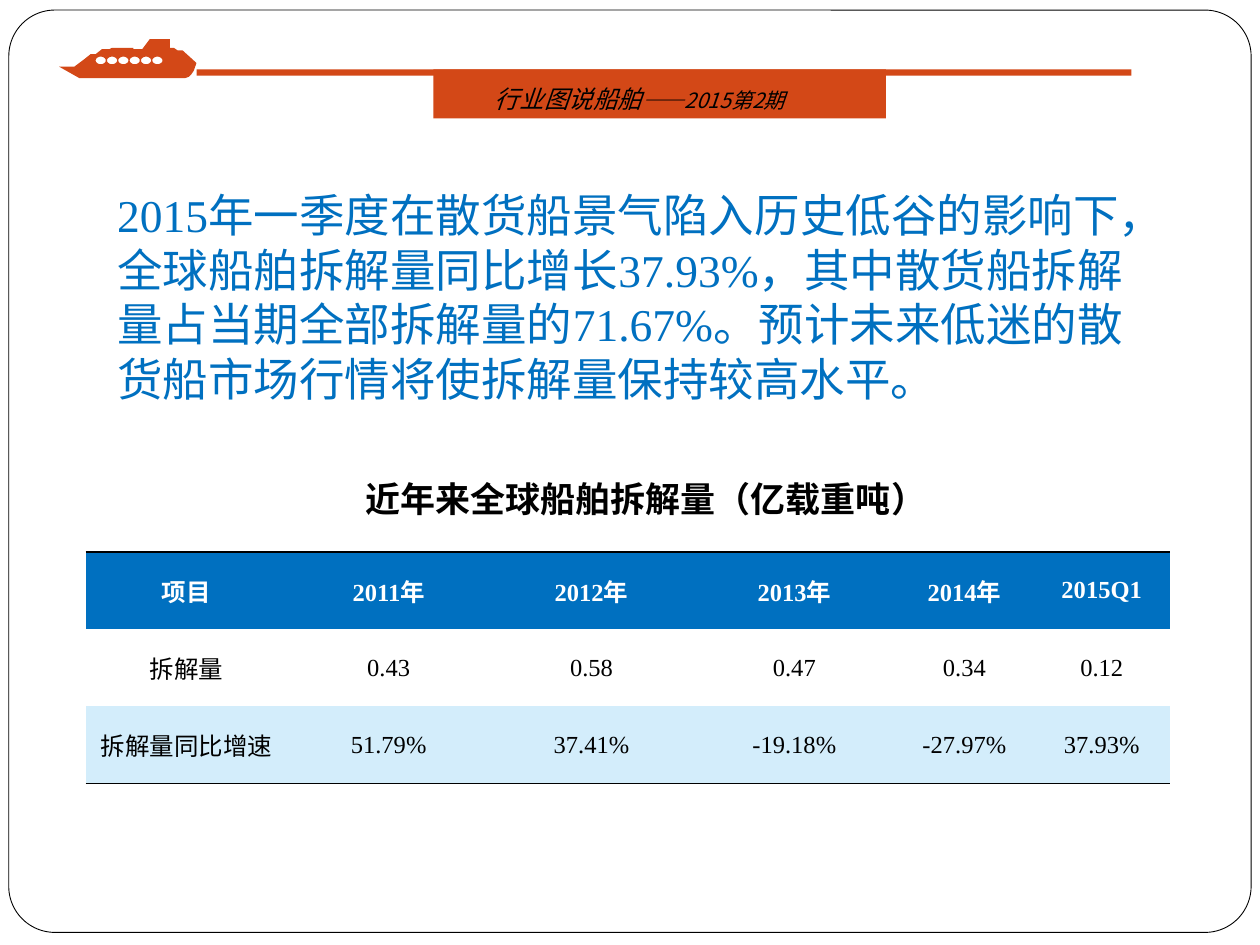
"""Build the slide on global ship scrapping volumes."""
from dataclasses import dataclass
from math import cos, pi, sin

from lxml.etree import SubElement
from pptx import Presentation
from pptx.dml.color import RGBColor
from pptx.enum.shapes import MSO_SHAPE as Shape
from pptx.enum.text import MSO_ANCHOR as Anchor, MSO_AUTO_SIZE as AutoSize, PP_ALIGN as Align
from pptx.oxml import parse_xml
from pptx.oxml.ns import nsdecls, qn
from pptx.util import Inches, Pt


@dataclass(frozen=True)
class Theme:
    white: RGBColor = RGBColor(0xFF, 0xFF, 0xFF)
    black: RGBColor = RGBColor(0, 0, 0)
    blue: RGBColor = RGBColor(0x00, 0x70, 0xC0)
    pale: RGBColor = RGBColor(0xD3, 0xED, 0xFB)
    orange: RGBColor = RGBColor(0xD3, 0x48, 0x17)
    serif: str = "Times New Roman"
    sans: str = "Lato"
    banner: str = "Noto Sans CJK SC"
    title: float = 26
    caption: float = 20
    body: float = 14
    small: float = 12


theme = Theme()


def write(para, text, size=theme.body, font=theme.serif, color=theme.black, bold=False, italic=False):
    span = para.add_run()
    span.text = text
    span.font.size = Pt(size)
    span.font.name = font
    span.font.color.rgb = color
    span.font.bold = bold
    span.font.italic = italic


def paint(shape, color):
    shape.shadow.inherit = False
    shape.fill.solid()
    shape.fill.fore_color.rgb = color
    shape.line.fill.background()


deck = Presentation()
deck.slide_width, deck.slide_height = Inches(10), Inches(7.5)
page = deck.slides.add_slide(deck.slide_layouts[5])

frame = page.shapes.add_shape(
    Shape.ROUNDED_RECTANGLE, Inches(0.07), Inches(0.08), Inches(9.86), Inches(7.32))
frame.adjustments[0] = 0.05
paint(frame, theme.white)
frame.line.color.rgb = theme.black
frame.line.width = Pt(0.5)
frame.element.getparent().insert(2, frame.element)

title = page.shapes.title
title.left, title.top, title.width, title.height = (Inches(n) for n in (0.83, 2.49, 8.5, 1.25))
title_text = title.text_frame
title_text.auto_size = AutoSize.NONE
title_text.word_wrap = True
title_text.vertical_anchor = Anchor.BOTTOM
title_text.margin_bottom = Inches(0.52)
para = title_text.paragraphs[0]
para.alignment = Align.LEFT
para.line_spacing = Pt(31.2)
write(para, "2015年一季度在散货船景气陷入历史低谷的影响下，全球船舶拆解量同比增长37.93%，"
      "其中散货船拆解量占当期全部拆解量的71.67%。预计未来低迷的散货船市场行情将使拆解量保持较高水平。",
      size=theme.title, color=theme.blue)

rows = [
    ("项目", "2011年", "2012年", "2013年", "2014年", "2015Q1"),
    ("拆解量", "0.43", "0.58", "0.47", "0.34", "0.12"),
    ("拆解量同比增速", "51.79%", "37.41%", "-19.18%", "-27.97%", "37.93%"),
]
widths = (1.6, 1.61, 1.61, 1.61, 1.09, 1.09)
fills = (theme.blue, theme.white, theme.pale)
edges = ("a:lnT", None, "a:lnB")
holder = page.shapes.add_table(
    len(rows), len(widths), Inches(0.68), Inches(4.38), Inches(sum(widths)), Inches(1.84))
table = holder.table
table.first_row = table.horz_banding = False
table_style = holder.element.find(".//" + qn("a:tableStyleId"))
table_style.text = "{2D5ABB26-0587-4C30-8999-92F81FD0307C}"
for column, width in zip(table.columns, widths):
    column.width = Inches(width)
for r, (values, fill, edge) in enumerate(zip(rows, fills, edges)):
    table.rows[r].height = Inches(1.84 / len(rows))
    header = r == 0
    for c, value in enumerate(values):
        cell = table.cell(r, c)
        cell.vertical_anchor = Anchor.MIDDLE
        cell.margin_left = cell.margin_right = Inches(0.07)
        cell.margin_top = cell.margin_bottom = 0
        cell.fill.solid()
        cell.fill.fore_color.rgb = fill
        para = cell.text_frame.paragraphs[0]
        para.alignment = Align.CENTER
        write(para, value, color=theme.white if header else theme.black, bold=header)
        if edge:
            border = parse_xml(f'<{edge} {nsdecls("a")} w="{Pt(1)}"/>')
            solid = SubElement(border, qn("a:solidFill"))
            SubElement(solid, qn("a:srgbClr"), val=str(theme.black))
            cell.fill._xPr.insert(0, border)

caption = page.shapes.add_textbox(Inches(2.48), Inches(3.74), Inches(4.99), Inches(0.44))
caption.text_frame.word_wrap = False
caption.text_frame.vertical_anchor = Anchor.MIDDLE
para = caption.text_frame.paragraphs[0]
para.alignment = Align.CENTER
para._p.get_or_add_pPr().set("indent", str(Inches(0.3)))
write(para, "近年来全球船舶拆解量（亿载重吨）", size=theme.caption, font=theme.sans, bold=True)

banner = page.shapes.add_group_shape().shapes
for left, width, height in ((1.56, 7.42, 0.05), (3.44, 3.59, 0.39)):
    bar = banner.add_shape(
        Shape.RECTANGLE, Inches(left), Inches(0.55), Inches(width), Inches(height))
    paint(bar, theme.orange)

hull = [
    (1.45, 0.4), (1.41, 0.4), (1.38, 0.38), (1.35, 0.38), (1.35, 0.31), (1.19, 0.31),
    (1.13, 0.39), (1.06, 0.39), (1.06, 0.38), (0.89, 0.38), (0.87, 0.39), (0.81, 0.39),
    (0.76, 0.43), (0.72, 0.43), (0.67, 0.47), (0.59, 0.53), (0.47, 0.53), (0.63, 0.62),
    (1.47, 0.62), (1.5, 0.61), (1.52, 0.59), (1.54, 0.56), (1.56, 0.5),
]
portholes = [
    [(0.8 + 0.09 * n + 0.04 * cos(pi * step / 12), 0.48 + 0.03 * sin(pi * step / 12))
     for step in range(24)]
    for n in range(6)
]
outlines = [[(x * 1000, y * 1000) for x, y in points] for points in (hull, *portholes)]
builder = banner.build_freeform(*outlines[0][0], scale=Inches(0.001))
for points in outlines:
    builder.move_to(*points[0])
    builder.add_line_segments(points[1:], close=True)
paint(builder.convert_to_shape(), theme.orange)

issue = banner.add_textbox(Inches(3.83), Inches(0.62), Inches(2.81), Inches(0.34))
issue.text_frame.word_wrap = True
para = issue.text_frame.paragraphs[0]
for text, size in (("行业图说船舶", theme.body), ("——2015第2期", theme.small)):
    write(para, text, size=size, font=theme.banner, italic=True)

deck.save("out.pptx")
